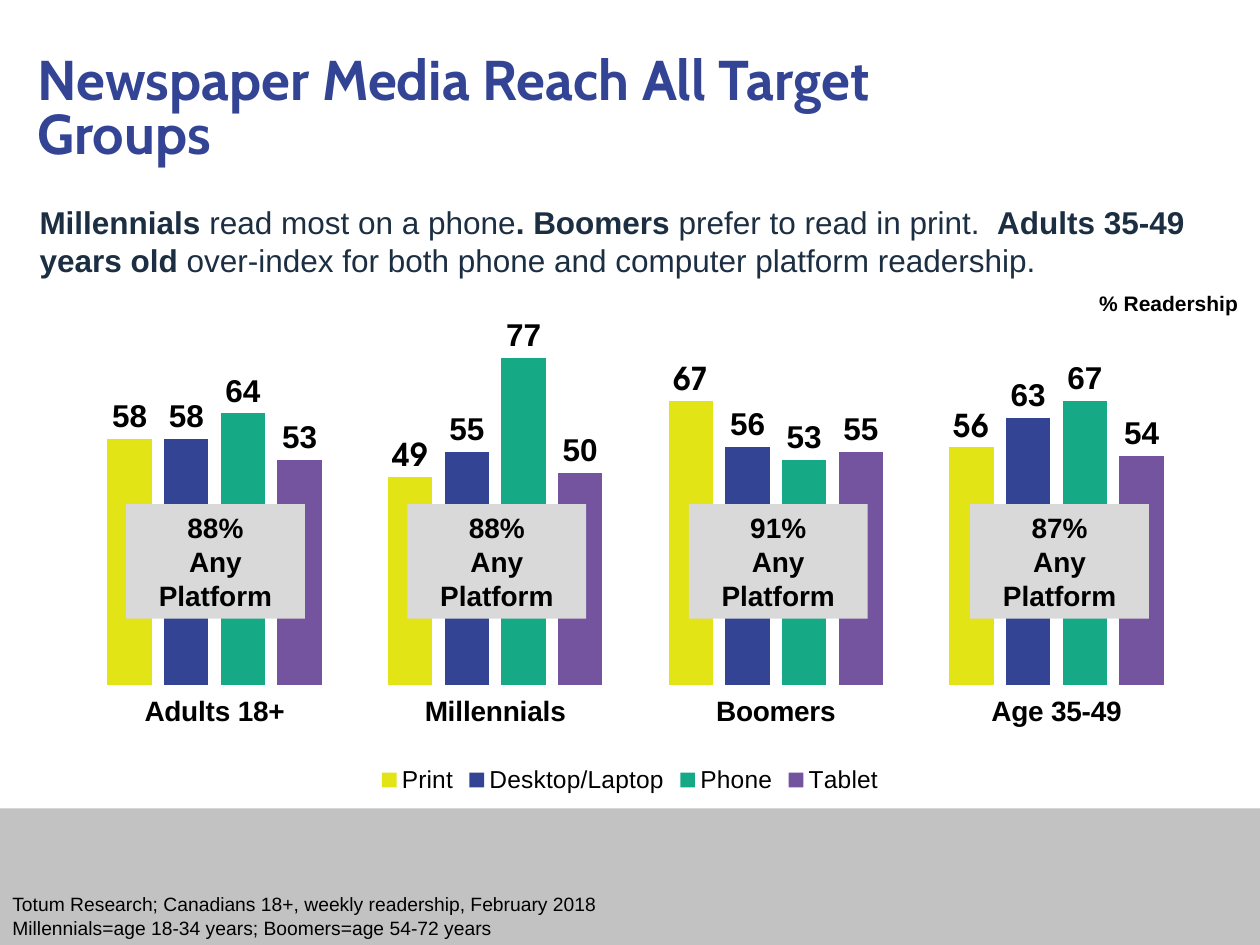
from lxml.etree import SubElement
from pptx import Presentation
from pptx.chart.data import CategoryChartData
from pptx.dml.color import RGBColor
from pptx.enum.chart import XL_CHART_TYPE, XL_LABEL_POSITION, XL_LEGEND_POSITION, XL_TICK_MARK
from pptx.enum.shapes import MSO_SHAPE
from pptx.enum.text import MSO_ANCHOR, MSO_AUTO_SIZE, PP_ALIGN
from pptx.oxml.ns import qn
from pptx.util import Pt

GROUPS = ["Adults 18+", "Millennials", "Boomers", "Age 35-49"]
ANY_PLATFORM = ["88%", "88%", "91%", "87%"]
PLATFORMS = [
    ("Print", "E3E416", (58, 49, 67, 56)),
    ("Desktop/Laptop", "334495", (58, 55, 56, 63)),
    ("Phone", "16A985", (64, 77, 53, 67)),
    ("Tablet", "74539F", (53, 50, 55, 54)),
]
CHART_FONT = "TeX Gyre Adventor"
PLOT_AREA = {"x": 0.01, "y": 0.132, "w": 0.99, "h": 0.668}


def color(value):
    return RGBColor.from_string(value)


def set_font(font, size, bold=False, name="Arial", fill="000000"):
    formats = {"size": Pt(size), "bold": bold, "name": name}
    for attribute, value in formats.items():
        setattr(font, attribute, value)
    font.color.rgb = color(fill)


def write(shape, paragraphs, align=PP_ALIGN.LEFT, spacing=None, **font):
    """Fill a shape; each paragraph is a list of (text, bold) spans."""
    frame = shape.text_frame
    formats = {"word_wrap": True, "auto_size": MSO_AUTO_SIZE.SHAPE_TO_FIT_TEXT}
    for attribute, value in formats.items():
        setattr(frame, attribute, value)
    for index, spans in enumerate(paragraphs):
        para = frame.add_paragraph() if index else frame.paragraphs[0]
        para.alignment = align
        if spacing:
            para.line_spacing = spacing
        for text, bold in spans:
            span = para.add_run()
            span.text = text
            set_font(span.font, bold=bold, **font)


def add_text(page, bounds, paragraphs, **formats):
    box = page.shapes.add_textbox(*map(Pt, bounds))
    write(box, paragraphs, **formats)


def add_panel(page, bounds, fill):
    panel = page.shapes.add_shape(MSO_SHAPE.RECTANGLE, *map(Pt, bounds))
    panel.shadow.inherit = False
    panel.fill.solid()
    panel.fill.fore_color.rgb = color(fill)
    panel.line.fill.background()
    return panel


def fix_plot_area(chart):
    """Pin the inner plot area to fractions of the chart frame."""
    plot_area = chart.plots[0]._element.getparent()
    layout = plot_area.find(qn("c:layout"))
    if layout is None:
        layout = SubElement(plot_area, qn("c:layout"))
        plot_area.insert(0, layout)
    manual = SubElement(layout, qn("c:manualLayout"))
    settings = {"layoutTarget": "inner", "xMode": "edge", "yMode": "edge", **PLOT_AREA}
    for tag, value in settings.items():
        SubElement(manual, qn(f"c:{tag}")).set("val", str(value))


def add_readership_chart(page, bounds):
    data = CategoryChartData()
    data.categories = GROUPS
    for name, _, values in PLATFORMS:
        data.add_series(name, values)
    chart = page.shapes.add_chart(
        XL_CHART_TYPE.COLUMN_CLUSTERED, *map(Pt, bounds), data).chart
    set_font(chart.font, 18, name=CHART_FONT)
    chart.has_title = False
    chart.has_legend = True
    chart.legend.position = XL_LEGEND_POSITION.BOTTOM
    chart.legend.include_in_layout = False
    set_font(chart.legend.font, 14)

    plot = chart.plots[0]
    for attribute, value in {"gap_width": 150, "overlap": -28, "vary_by_categories": False}.items():
        setattr(plot, attribute, value)
    for series, (name, fill, _) in zip(plot.series, PLATFORMS):
        series.format.fill.solid()
        series.format.fill.fore_color.rgb = color(fill)
        labels = series.data_labels
        labels.show_value = True
        labels.position = XL_LABEL_POSITION.OUTSIDE_END
        set_font(labels.font, 18, True, CHART_FONT if name == "Print" else "Arial")
    first_label = plot.series[0].points[0].data_label
    set_font(first_label.font, 18, True)
    first_label.position = XL_LABEL_POSITION.OUTSIDE_END

    groups = chart.category_axis
    groups.major_tick_mark = XL_TICK_MARK.OUTSIDE
    groups.format.line.fill.background()
    set_font(groups.tick_labels.font, 16, True)
    scale = chart.value_axis
    formats = {"visible": False, "has_major_gridlines": False,
               "minimum_scale": 0, "maximum_scale": 90}
    for attribute, value in formats.items():
        setattr(scale, attribute, value)
    fix_plot_area(chart)


def add_reach_panels(page):
    for index, reach in enumerate(ANY_PLATFORM):
        panel = add_panel(page, (72 + 160.8 * index, 288, 102.2, 65.5), "D9D9D9")
        panel.text_frame.vertical_anchor = MSO_ANCHOR.MIDDLE
        write(panel, [[(reach, True)], [("Any Platform", True)]],
              align=PP_ALIGN.CENTER, size=16)


def main():
    deck = Presentation()
    deck.slide_width, deck.slide_height = Pt(720), Pt(540)
    page = deck.slides.add_slide(deck.slide_layouts[6])
    add_panel(page, (0, 462, 720, 78), "C2C2C2")
    add_readership_chart(page, (36, 130.3, 648, 326.2))
    add_text(page, (14.4, 29.5, 590.4, 69),
             [[("Newspaper Media Reach All Target Groups", True)]],
             spacing=0.8, size=32, name="Cabin", fill="334495")
    add_text(page, (15.5, 112.3, 672, 51), [[
        ("Millennials ", True), ("read most on a phone", False),
        (". Boomers", True), (" prefer to read in print.  ", False),
        ("Adults 35-49 years old ", True),
        ("over-index for both phone and computer platform readership.", False),
    ]], size=18, fill="1C2F42")
    add_text(page, (619.2, 162.7, 97.2, 21.8), [[("% Readership", True)]],
             align=PP_ALIGN.CENTER, size=12)
    add_text(page, (0, 506.6, 588.2, 33.8), [
        [("Totum Research; Canadians 18+, weekly readership, February 2018", False)],
        [("Millennials=age 18-34 years; Boomers=age 54-72 years", False)],
    ], size=11)
    add_reach_panels(page)
    deck.save("out.pptx")


if __name__ == "__main__":
    main()
